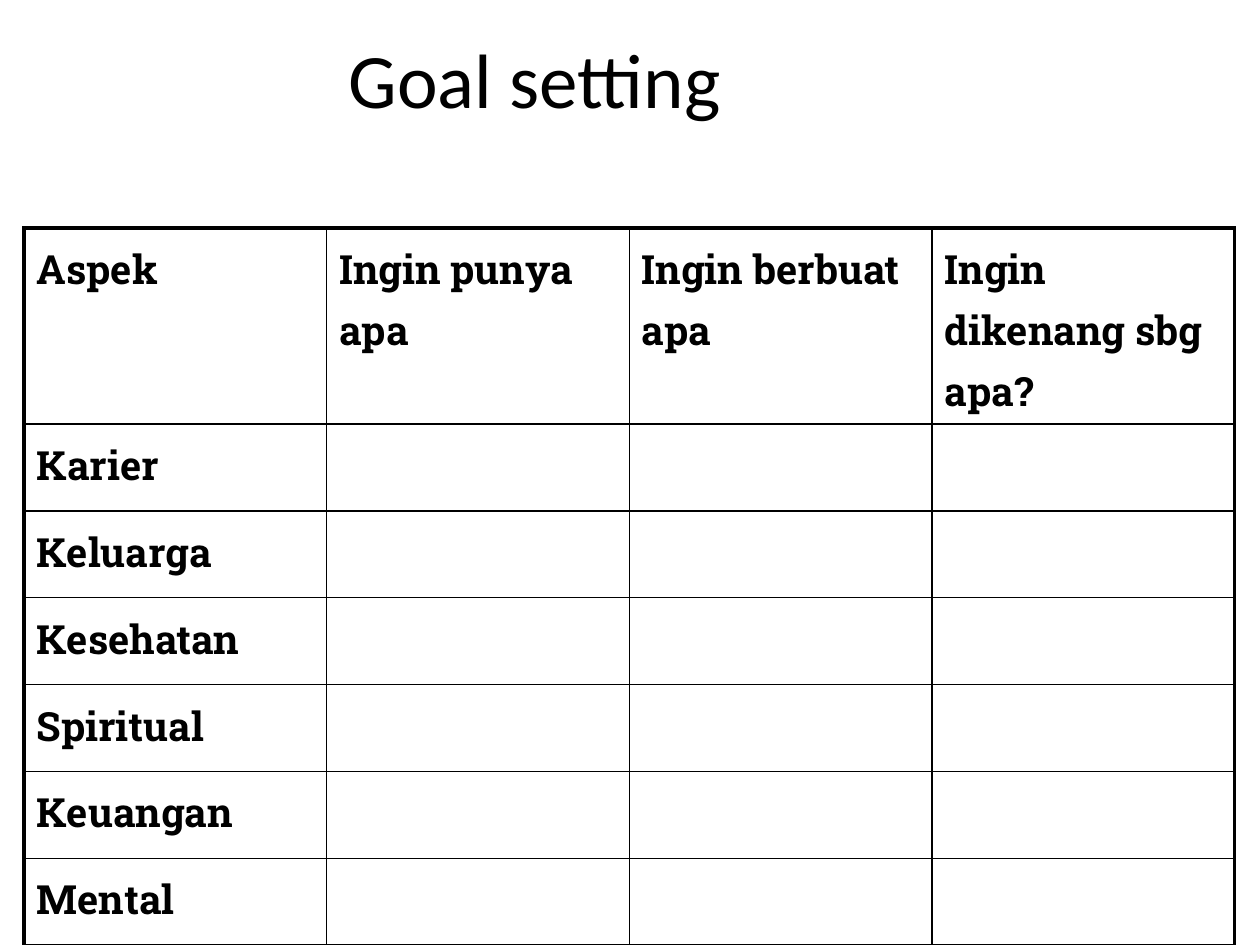
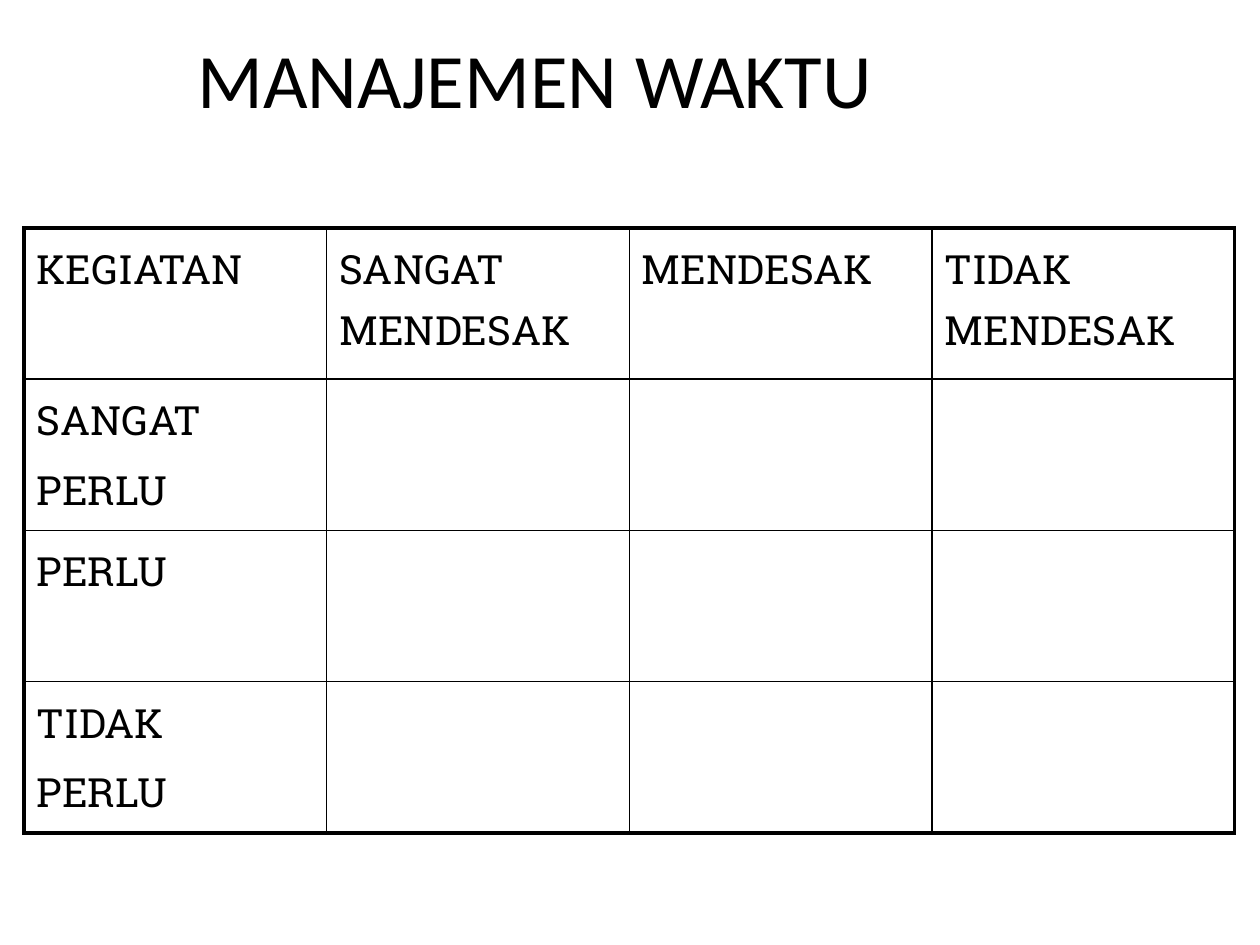
"""Build two worksheet slides: a goal-setting table and a time-management matrix."""
import lxml.etree
import pptx
import pptx.dml.color
import pptx.enum.text
import pptx.oxml.ns
import pptx.util

Inches = pptx.util.Inches
Pt = pptx.util.Pt

BLACK = pptx.dml.color.RGBColor(0x00, 0x00, 0x00)
WHITE = pptx.dml.color.RGBColor(0xFF, 0xFF, 0xFF)
TITLE_FONT = "Calibri"
TABLE_FONT = "Roboto Slab"
OUTER_LINE = Pt(2.25)
INNER_LINE = Pt(1)

GOAL_ROWS = [
    ["Aspek", "Ingin punya apa", "Ingin berbuat apa", "Ingin dikenang sbg apa?"],
    ["Karier"],
    ["Keluarga"],
    ["Kesehatan"],
    ["Spiritual"],
    ["Keuangan"],
    ["Mental"],
]
TIME_ROWS = [
    ["KEGIATAN", "SANGAT MENDESAK", "MENDESAK", "TIDAK MENDESAK"],
    ["SANGAT\nPERLU"],
    ["PERLU"],
    ["TIDAK\nPERLU"],
]


class Worksheet:
    """Hold the shared style and the current slide."""

    def __init__(self):
        self.deck = pptx.Presentation()
        self.deck.slide_width = Inches(10)
        self.deck.slide_height = Inches(7.5)
        self.slide = None

    def add_page(self, title):
        self.slide = self.deck.slides.add_slide(self.deck.slide_layouts[5])
        background = self.slide.background.fill
        background.solid()
        background.fore_color.rgb = WHITE
        box = self.slide.shapes.title
        box.left, box.top = Inches(0.23), Inches(0.15)
        box.width, box.height = Inches(8.03), Inches(0.93)
        frame = box.text_frame
        frame.text = title
        frame.vertical_anchor = pptx.enum.text.MSO_ANCHOR.MIDDLE
        frame.paragraphs[0].alignment = pptx.enum.text.PP_ALIGN.CENTER
        self.format_runs(frame.paragraphs[0], TITLE_FONT, 44, False)

    def add_table(self, rows, header_height, row_height, bold):
        column_count = len(rows[0])
        height = header_height + row_height * (len(rows) - 1)
        table = self.slide.shapes.add_table(
            len(rows), column_count, Inches(0.19), Inches(1.81), Inches(9.61), Inches(height)
        ).table
        table.first_row = False
        table.horz_banding = False
        for row_index, texts in enumerate(rows):
            table.rows[row_index].height = Inches(row_height if row_index else header_height)
            for column_index in range(column_count):
                cell = table.cell(row_index, column_index)
                cell.fill.background()
                self.add_borders(cell, {
                    "L": column_index == 0,
                    "R": column_index == column_count - 1,
                    "T": row_index == 0,
                    "B": row_index == len(rows) - 1,
                })
                if column_index < len(texts):
                    self.fill_cell(cell, texts[column_index], bold)

    def fill_cell(self, cell, text, bold):
        cell.text_frame.text = text
        for para in cell.text_frame.paragraphs:
            para.line_spacing = 1.15
            para.space_before = Pt(5)
            self.format_runs(para, TABLE_FONT, 23, bold)

    def format_runs(self, para, font_name, size, bold):
        for span in para.runs:
            span.font.name = font_name
            span.font.size = Pt(size)
            span.font.bold = bold
            span.font.color.rgb = BLACK

    def add_borders(self, cell, outer_sides):
        qn = pptx.oxml.ns.qn
        properties = cell._tc.get_or_add_tcPr()
        for position, (side, is_outer) in enumerate(outer_sides.items()):
            line = lxml.etree.Element(qn(f"a:ln{side}"), w=str(OUTER_LINE if is_outer else INNER_LINE))
            fill = lxml.etree.SubElement(line, qn("a:solidFill"))
            lxml.etree.SubElement(fill, qn("a:srgbClr"), val=str(BLACK))
            properties.insert(position, line)


def main():
    sheet = Worksheet()
    sheet.add_page("Goal setting")
    sheet.add_table(GOAL_ROWS, header_height=1.55, row_height=0.69, bold=True)
    sheet.add_page("MANAJEMEN WAKTU")
    sheet.add_table(TIME_ROWS, header_height=1.2, row_height=1.2, bold=False)
    sheet.deck.save("out.pptx")


if __name__ == "__main__":
    main()
